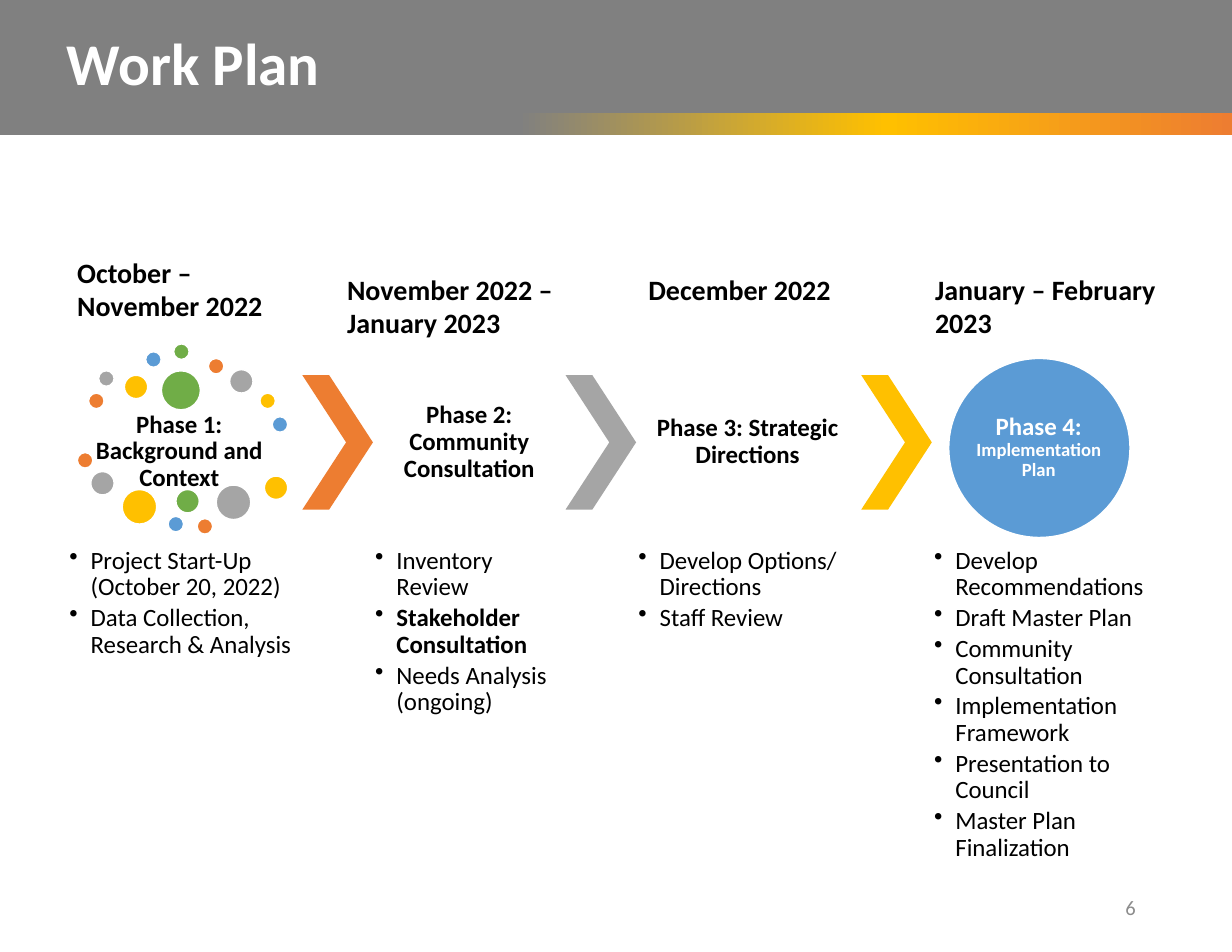
"""Build the Work Plan slide with its four project phases."""
from dataclasses import dataclass

from lxml import etree
from pptx import Presentation
from pptx.dml.color import RGBColor
from pptx.enum.shapes import MSO_SHAPE
from pptx.enum.text import MSO_ANCHOR, PP_ALIGN
from pptx.oxml.ns import qn
from pptx.util import Inches, Pt

RECTANGLE, OVAL, CHEVRON = MSO_SHAPE.RECTANGLE, MSO_SHAPE.OVAL, MSO_SHAPE.CHEVRON
LEFT, CENTER, RIGHT = PP_ALIGN.LEFT, PP_ALIGN.CENTER, PP_ALIGN.RIGHT
TOP, MIDDLE = MSO_ANCHOR.TOP, MSO_ANCHOR.MIDDLE


@dataclass(frozen=True)
class Theme:
    """Font, colours and type sizes of the slide."""
    font: str = "Calibri"
    black: str = "000000"
    white: str = "FFFFFF"
    banner: str = "808080"
    number: str = "8C8C8C"
    orange: str = "ED7D31"
    gray: str = "A5A5A5"
    yellow: str = "FFC000"
    blue: str = "5B9BD5"
    green: str = "70AD47"
    title_size: float = 38
    date_size: float = 18
    body_size: float = 16
    small_size: float = 12
    number_size: float = 13.2


THEME = Theme()
DEFAULT_INSETS = (0.1, 0.05)
TIGHT_INSETS = (0.02, 0.02)
SMALL, MEDIUM, LARGE, LARGEST = 0.14, 0.21, 0.31, 0.35
PHASE_TOP, PHASE_HEIGHT = 3.35, 1.2
TASKS_TOP, TASKS_HEIGHT = 4.87, 1.06
BULLET_INDENT = 0.19

DOTS = [
    (0.79, 3.51, SMALL, THEME.orange),
    (0.88, 3.31, SMALL, THEME.gray),
    (1.11, 3.35, MEDIUM, THEME.yellow),
    (1.3, 3.14, SMALL, THEME.blue),
    (1.55, 3.07, SMALL, THEME.green),
    (1.86, 3.2, SMALL, THEME.orange),
    (2.05, 3.3, MEDIUM, THEME.gray),
    (2.32, 3.51, SMALL, THEME.yellow),
    (2.43, 3.72, SMALL, THEME.blue),
    (1.44, 3.31, LARGEST, THEME.green),
    (0.69, 4.04, SMALL, THEME.orange),
    (0.81, 4.21, MEDIUM, THEME.gray),
    (1.09, 4.37, LARGE, THEME.yellow),
    (1.5, 4.61, SMALL, THEME.blue),
    (1.57, 4.37, MEDIUM, THEME.green),
    (1.76, 4.63, SMALL, THEME.orange),
    (1.93, 4.33, LARGE, THEME.gray),
    (2.36, 4.25, MEDIUM, THEME.yellow),
]
CHEVRONS = [(2.7, THEME.orange), (5.05, THEME.gray), (7.69, THEME.yellow)]
PHASES = [
    ((0.74, 3.75, 1.72, 0.57), "Phase 1: Background and Context"),
    ((3.33, PHASE_TOP, 1.72, PHASE_HEIGHT), "Phase 2: Community Consultation"),
    ((5.74, PHASE_TOP, 1.87, PHASE_HEIGHT), "Phase 3: Strategic Directions"),
]
TASKS = [
    (0.6, 2.1, ["Project Start-Up (October 20, 2022)",
                "Data Collection, Research & Analysis"]),
    (3.33, 1.72, ["Inventory Review", "Stakeholder Consultation",
                  "Needs Analysis (ongoing)"]),
    (5.68, 2.01, ["Develop Options/ Directions", "Staff Review"]),
    (8.32, 1.92, ["Develop Recommendations", "Draft Master Plan",
                  "Community Consultation", "Implementation Framework",
                  "Presentation to Council", "Master Plan Finalization"]),
]
EMPHASIZED_TASK = "Stakeholder Consultation"
DATES = [
    ((0.59, 2.23, 1.91, 0.71), "October – November 2022"),
    ((3, 2.38, 2.18, 0.71), "November 2022 – January 2023"),
    ((5.69, 2.38, 2.25, 0.4), "December 2022"),
    ((8.25, 2.38, 2.25, 0.71), "January – February 2023"),
]


def add_figure(slide, preset, box, color, outlined=False):
    """Add a flat preset shape, with a thin white outline if asked."""
    figure = slide.shapes.add_shape(preset, *map(Inches, box))
    figure.shadow.inherit = False
    figure.fill.solid()
    figure.fill.fore_color.rgb = RGBColor.from_string(color)
    if outlined:
        figure.line.color.rgb = RGBColor.from_string(THEME.white)
        figure.line.width = Pt(1)
    else:
        figure.line.fill.background()
    return figure


def add_gradient_strip(slide, box, stops):
    """Add a strip that fades from left to right through the stops."""
    strip = add_figure(slide, RECTANGLE, box, THEME.banner)
    strip.fill.gradient()
    strip.fill.gradient_angle = 0
    stop_list = strip.fill._fill._gradFill.find(qn("a:gsLst"))
    for old_stop in list(stop_list):
        stop_list.remove(old_stop)
    for percent, color in stops:
        stop = etree.SubElement(stop_list, qn("a:gs"), pos=str(percent * 1000))
        etree.SubElement(stop, qn("a:srgbClr"), val=color)


def add_frame(slide, box, insets=DEFAULT_INSETS, anchor=TOP):
    """Add a wrapping text box and return its text frame."""
    frame = slide.shapes.add_textbox(*map(Inches, box)).text_frame
    frame.word_wrap = True
    frame.vertical_anchor = anchor
    frame.margin_left = frame.margin_right = Inches(insets[0])
    frame.margin_top = frame.margin_bottom = Inches(insets[1])
    return frame


def add_run(paragraph, text, size, color=THEME.black, bold=False):
    """Add one styled run to a paragraph."""
    run = paragraph.add_run()
    run.text = text
    run.font.name = THEME.font
    run.font.size = Pt(size)
    run.font.bold = bold
    run.font.color.rgb = RGBColor.from_string(color)


def add_label(slide, box, runs, insets=DEFAULT_INSETS, anchor=TOP, align=LEFT, spacing=1.0):
    """Add a one-paragraph text box made of the given runs."""
    paragraph = add_frame(slide, box, insets, anchor).paragraphs[0]
    paragraph.alignment = align
    paragraph.line_spacing = spacing
    for run in runs:
        add_run(paragraph, *run)


def add_tasks(slide, left, width, tasks):
    """Add the bulleted tasks of one phase."""
    frame = add_frame(slide, (left, TASKS_TOP, width, TASKS_HEIGHT), TIGHT_INSETS)
    for index, task in enumerate(tasks):
        paragraph = frame.add_paragraph() if index else frame.paragraphs[0]
        paragraph.line_spacing = 0.9
        paragraph.space_after = Pt(2.4)
        properties = paragraph._p.get_or_add_pPr()
        properties.set("marL", str(Inches(BULLET_INDENT)))
        properties.set("indent", str(-Inches(BULLET_INDENT)))
        etree.SubElement(properties, qn("a:buChar"), char="•")
        add_run(paragraph, task, THEME.body_size, bold=task == EMPHASIZED_TASK)


def add_banner(slide):
    """Add the banner, its gradient strip, the title and the slide number."""
    add_figure(slide, RECTANGLE, (0, 0, 11, 1.09), THEME.banner)
    add_gradient_strip(slide, (0, 1.01, 11, 0.2), [
        (0, THEME.banner), (42, THEME.banner), (72, THEME.yellow), (100, THEME.orange)])
    add_label(slide, (9.77, 7.88, 0.47, 0.45),
              [("6", THEME.number_size, THEME.number)], anchor=MIDDLE, align=RIGHT)
    add_label(slide, (0.5, 0.19, 7.36, 0.74),
              [("Work Plan", THEME.title_size, THEME.white, True)])


def add_phases(slide):
    """Add the dots, chevrons, final circle and phase names."""
    for left, top, diameter, color in DOTS:
        add_figure(slide, OVAL, (left, top, diameter, diameter), color, outlined=True)
    for left, color in CHEVRONS:
        chevron = add_figure(slide, CHEVRON, (left, PHASE_TOP, 0.63, PHASE_HEIGHT), color)
        chevron.adjustments[0] = 0.62
    for box, name in PHASES:
        add_label(slide, box, [(name, THEME.body_size, THEME.black, True)],
                  TIGHT_INSETS, MIDDLE, CENTER, 0.9)
    add_figure(slide, OVAL, (8.47, 3.2, 1.62, 1.6), THEME.blue, outlined=True)
    add_label(slide, (8.7, 3.43, 1.15, 1.13), [
        ("Phase 4: ", THEME.body_size, THEME.white, True),
        ("Implementation Plan", THEME.small_size, THEME.white, True),
    ], (0, 0), MIDDLE, CENTER, 0.9)


def main():
    """Build and save the slide."""
    presentation = Presentation()
    presentation.slide_width, presentation.slide_height = Inches(11), Inches(8.5)
    slide = presentation.slides.add_slide(presentation.slide_layouts[6])
    add_banner(slide)
    add_phases(slide)
    for left, width, tasks in TASKS:
        add_tasks(slide, left, width, tasks)
    for box, dates in DATES:
        add_label(slide, box, [(dates, THEME.date_size, THEME.black, True)])
    presentation.save("out.pptx")


if __name__ == "__main__":
    main()
